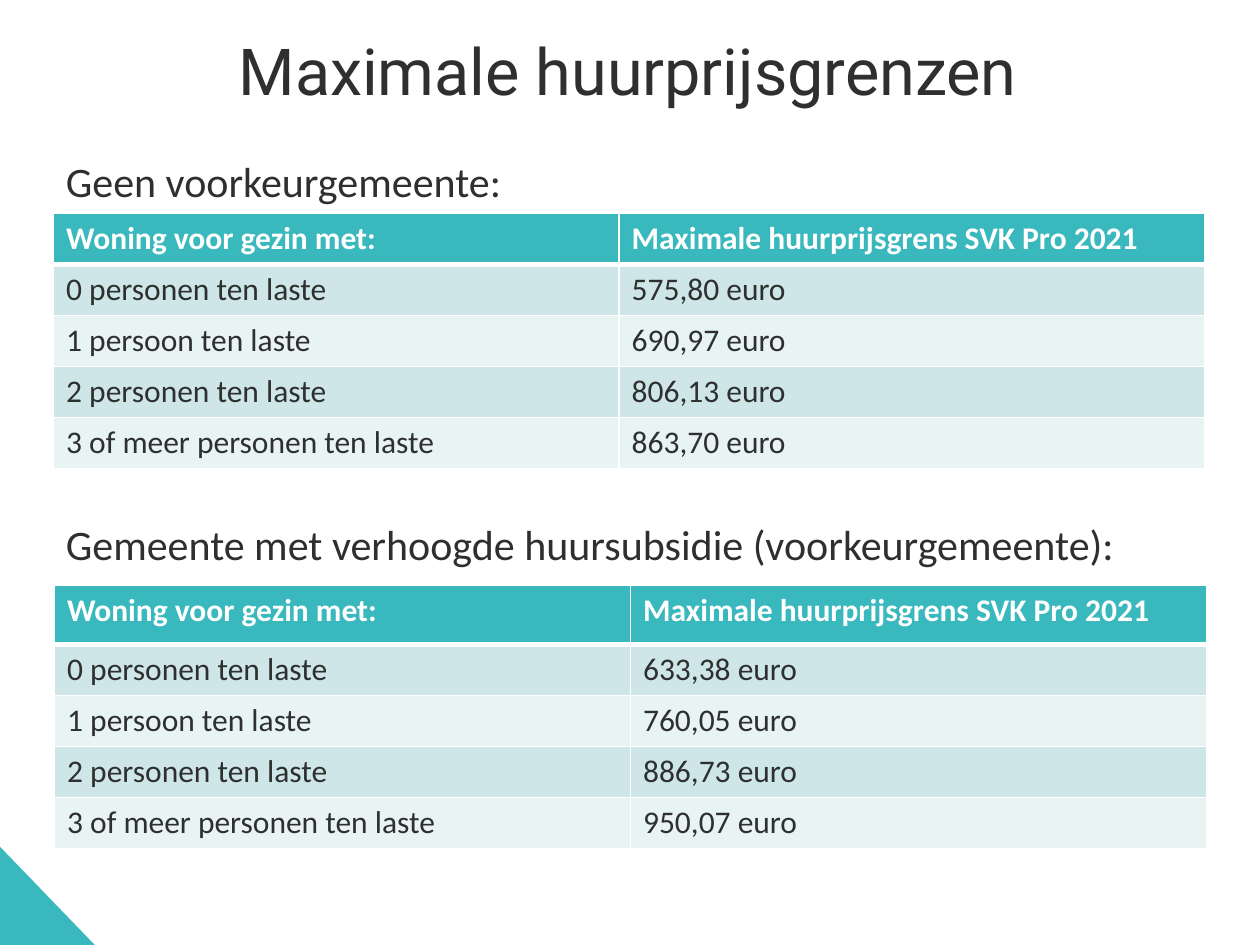
from lxml.etree import SubElement
from pptx import Presentation
from pptx.dml.color import RGBColor
from pptx.enum.shapes import MSO_SHAPE as Shape
from pptx.enum.text import MSO_ANCHOR as Anchor, MSO_AUTO_SIZE as AutoSize, PP_ALIGN as Align
from pptx.oxml.ns import qn
from pptx.util import Cm, Pt

TEAL = RGBColor(0x39, 0xB8, 0xBD)
BAND_DARK = RGBColor(0xCE, 0xE6, 0xE8)
BAND_LIGHT = RGBColor(0xE8, 0xF3, 0xF4)
INK = RGBColor(0x2E, 0x30, 0x2F)
WHITE = RGBColor(0xFF, 0xFF, 0xFF)

HEADER = ("Woning voor gezin met:", "Maximale huurprijsgrens SVK Pro 2021")
HOUSEHOLDS = (
    "0 personen ten laste",
    "1 persoon ten laste",
    "2 personen ten laste",
    "3 of meer personen ten laste",
)


def write(tf, text, *, size=18, font="Calibri", color=INK, bold=False,
          align=Align.LEFT, spacing=None):
    p = tf.paragraphs[0]
    p.alignment = align
    if spacing:
        p.line_spacing = Pt(spacing)
    r = p.add_run()
    r.text = text
    r.font.size = Pt(size)
    r.font.name = font
    r.font.bold = bold
    r.font.color.rgb = color


def set_borders(cell, top, bottom):
    tcPr = cell._tc.get_or_add_tcPr()
    for side, width in (("L", 1), ("R", 1), ("T", top), ("B", bottom)):
        ln = SubElement(tcPr, qn(f"a:ln{side}"), w=str(Pt(width)))
        fill = SubElement(ln, qn("a:solidFill"))
        SubElement(fill, qn("a:srgbClr"), val=str(WHITE))


class SlideBuilder:
    def __init__(self, prs):
        self.s = prs.slides.add_slide(prs.slide_layouts[6])
        self.row_height = 1.03
        self.heading_size = 24

    def corner(self, left, top, width, height):
        sp = self.s.shapes.add_shape(
            Shape.RIGHT_TRIANGLE, Cm(left), Cm(top), Cm(width), Cm(height))
        sp.shadow.inherit = False
        sp.fill.solid()
        sp.fill.fore_color.rgb = TEAL
        sp.line.fill.background()

    def title(self, text, left, top, width, height):
        tf = self.s.shapes.add_textbox(Cm(left), Cm(top), Cm(width), Cm(height)).text_frame
        tf.word_wrap = True
        tf.vertical_anchor = Anchor.MIDDLE
        tf.margin_left = tf.margin_right = tf.margin_top = tf.margin_bottom = 0
        write(tf, text, size=37, font="Roboto", align=Align.CENTER, spacing=38)

    def heading(self, text, left, top, width, wrap=True):
        tf = self.s.shapes.add_textbox(Cm(left), Cm(top), Cm(width), Cm(1.28)).text_frame
        tf.word_wrap = wrap
        tf.auto_size = AutoSize.SHAPE_TO_FIT_TEXT
        write(tf, text, size=self.heading_size)

    def rent_table(self, prices, left, top, col_widths, header_height):
        rows = [HEADER, *((h, f"{price} euro") for h, price in zip(HOUSEHOLDS, prices))]
        heights = [header_height] + [self.row_height] * len(prices)
        table = self.s.shapes.add_table(
            len(rows), len(HEADER), Cm(left), Cm(top),
            Cm(sum(col_widths)), Cm(sum(heights))).table
        for col, width in zip(table.columns, col_widths):
            col.width = Cm(width)
        for i, (texts, height) in enumerate(zip(rows, heights)):
            table.rows[i].height = Cm(height)
            is_header = i == 0
            fill = TEAL if is_header else BAND_DARK if i % 2 else BAND_LIGHT
            for j, text in enumerate(texts):
                cell = table.cell(i, j)
                set_borders(cell, top=3 if i == 1 else 1, bottom=3 if is_header else 1)
                cell.fill.solid()
                cell.fill.fore_color.rgb = fill
                write(cell.text_frame, text, bold=is_header,
                      color=WHITE if is_header else INK)


def main():
    prs = Presentation()
    prs.slide_width, prs.slide_height = Cm(25.4), Cm(19.05)
    b = SlideBuilder(prs)
    b.corner(0, 17.07, 1.93, 2)
    b.title("Maximale huurprijsgrenzen", 1.02, 0.76, 23.27, 1.52)
    b.rent_table(("575,80", "690,97", "806,13", "863,70"), 1.08, 4.3, (11.4, 11.81), 1.03)
    b.heading("Geen voorkeurgemeente:", 1.08, 3.02, 11.35)
    b.heading("Gemeente met verhoogde huursubsidie (voorkeurgemeente):",
              1.08, 10.32, 21.84, wrap=False)
    b.rent_table(("633,38", "760,05", "886,73", "950,07"), 1.1, 11.8, (11.61, 11.61), 1.19)
    prs.save("out.pptx")


if __name__ == "__main__":
    main()
